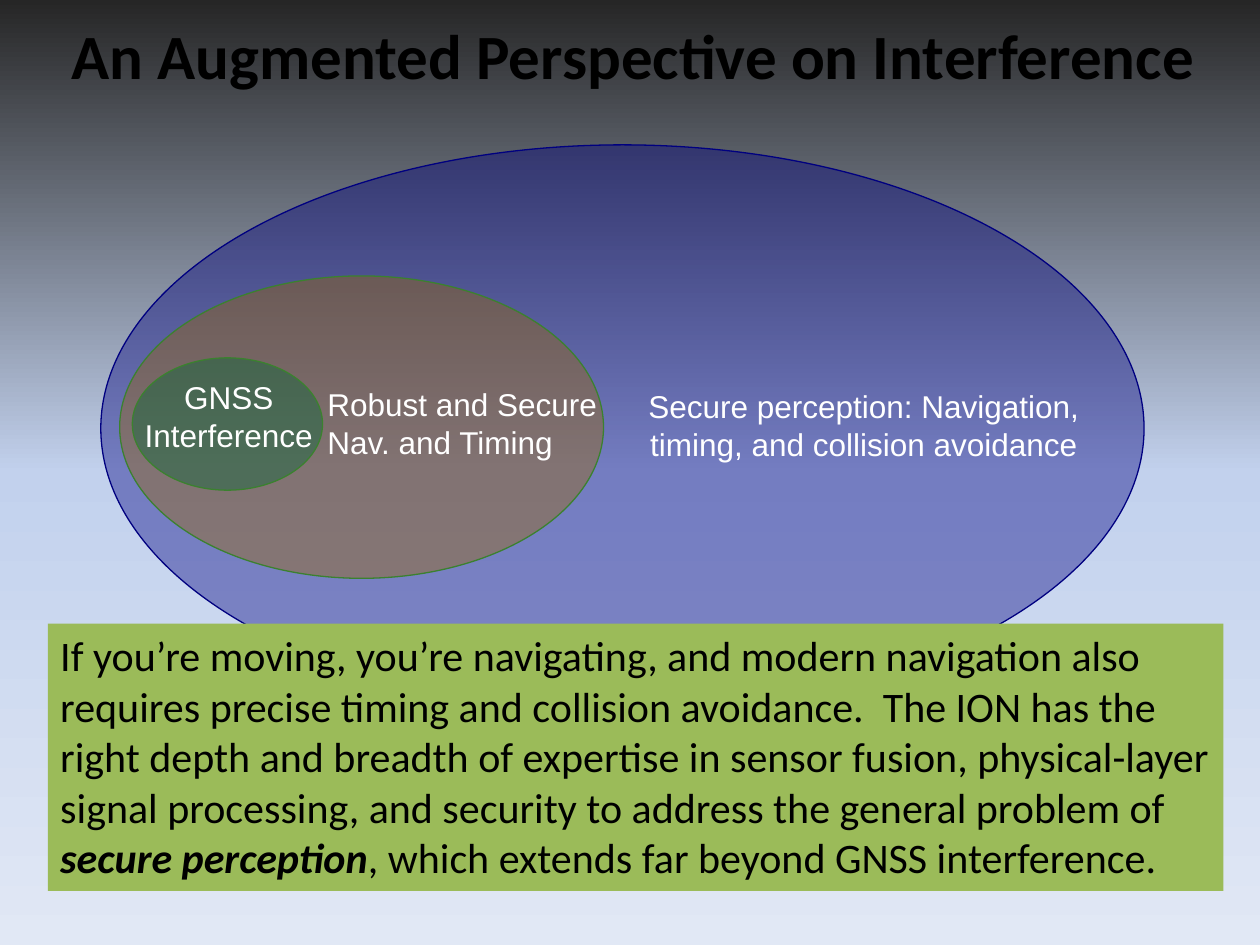
from copy import deepcopy

from lxml import etree
from pptx import Presentation
from pptx import util as u
from pptx.dml.color import RGBColor
from pptx.enum import shapes, text
from pptx.oxml.ns import qn

TITLE = "An Augmented Perspective on Interference"
TITLE_BOX = (0.42, 0.08, 9.21, 0.71)
BACKGROUND = [(0, "262626", 77), (50, "C2D1ED", 100), (100, "E1E8F5", 100)]

# Nested scopes, widest first: box, fill, outline
SCOPES = [
    ((0.8, 1.15, 8.28, 4.5), "000080", "000080"),
    ((0.95, 2.19, 3.84, 2.4), "996600", "3B812F"),
    ((1.05, 2.84, 1.51, 1.05), "006633", "3B812F"),
]
SCOPE_OPACITY = 40
LABELS = [
    ((1.04, 2.95, 1.55, 0.71), "GNSS\nInterference", "CENTER"),
    ((2.5, 3.01, 2.38, 0.71), "Robust and Secure\nNav. and Timing", "LEFT"),
    ((5.03, 3.02, 3.65, 1.01),
     "Secure perception: Navigation,\ntiming, and collision avoidance", "CENTER"),
]

MESSAGE_BOX = (0.38, 4.95, 9.33, 2.12)
MESSAGE = [
    ("If you’re moving, you’re navigating, and modern navigation also requires "
     "precise timing and collision avoidance.  The ION has the right depth and "
     "breadth of expertise in sensor fusion, physical-layer signal processing, "
     "and security to address the general problem of ", False),
    ("secure perception", True),
    (", which extends far beyond GNSS interference.", False),
]


def inches(box):
    return [u.Inches(length) for length in box]


def rgb(code):
    return RGBColor.from_string(code)


def set_opacity(color_parent, percent):
    color = next(color_parent.iter(qn("a:srgbClr")))
    etree.SubElement(color, qn("a:alpha")).set("val", str(percent * 1000))


def style(font, name, size, color, emphasis=False):
    font.name, font.size = name, u.Pt(size)
    font.color.rgb = rgb(color)
    font.bold = emphasis


def set_frame(frame, wrap):
    frame.word_wrap = wrap
    frame.auto_size = text.MSO_AUTO_SIZE.SHAPE_TO_FIT_TEXT
    frame.vertical_anchor = text.MSO_ANCHOR.TOP


def paint_background(slide):
    fill = slide.background.fill
    fill.gradient()
    fill.gradient_angle = 270
    stop_list = next(slide.background._cSld.iter(qn("a:gsLst")))
    stop_list.append(deepcopy(stop_list[-1]))
    for stop, (position, color, opacity) in zip(fill.gradient_stops, BACKGROUND):
        stop.position = position / 100
        stop.color.rgb = rgb(color)
    for element, (_, _, opacity) in zip(stop_list, BACKGROUND):
        if opacity < 100:
            set_opacity(element, opacity)


def add_title(slide):
    title = slide.shapes.title
    title.left, title.top, title.width, title.height = inches(TITLE_BOX)
    title.text_frame.text = TITLE
    set_frame(title.text_frame, wrap=False)
    heading = title.text_frame.paragraphs[0]
    heading.alignment = text.PP_ALIGN.CENTER
    style(heading.runs[0].font, "Calibri", 36, "000000", True)


def add_scopes(slide):
    diagram = slide.shapes.add_group_shape().shapes
    for box, color, outline in SCOPES:
        scope = diagram.add_shape(shapes.MSO_SHAPE.OVAL, *inches(box))
        scope.shadow.inherit = False
        scope.fill.solid()
        scope.fill.fore_color.rgb = rgb(color)
        set_opacity(scope._element.spPr, SCOPE_OPACITY)
        scope.line.color.rgb = rgb(outline)
        scope.line.width = u.Pt(0.75)
    for box, wording, alignment in LABELS:
        frame = diagram.add_textbox(*inches(box)).text_frame
        frame.text = wording
        set_frame(frame, wrap=False)
        for line in frame.paragraphs:
            line.alignment = text.PP_ALIGN[alignment]
            style(line.runs[0].font, "Arial", 18, "FFFFFF")


def add_message(slide):
    panel = slide.shapes.add_shape(shapes.MSO_SHAPE.RECTANGLE, *inches(MESSAGE_BOX))
    panel.shadow.inherit = False
    panel.fill.solid()
    panel.fill.fore_color.rgb = rgb("9BBB59")
    panel.line.fill.background()
    set_frame(panel.text_frame, wrap=True)
    message = panel.text_frame.paragraphs[0]
    message.alignment = text.PP_ALIGN.LEFT
    for wording, emphasis in MESSAGE:
        run = message.add_run()
        run.text = wording
        style(run.font, "Calibri", 24, "000000", emphasis)
        run.font.italic = emphasis


def main():
    deck = Presentation()
    deck.slide_width, deck.slide_height = u.Inches(10), u.Inches(7.5)
    slide = deck.slides.add_slide(deck.slide_layouts.get_by_name("Title Only"))
    paint_background(slide)
    add_title(slide)
    add_scopes(slide)
    add_message(slide)
    deck.save("out.pptx")


if __name__ == "__main__":
    main()
